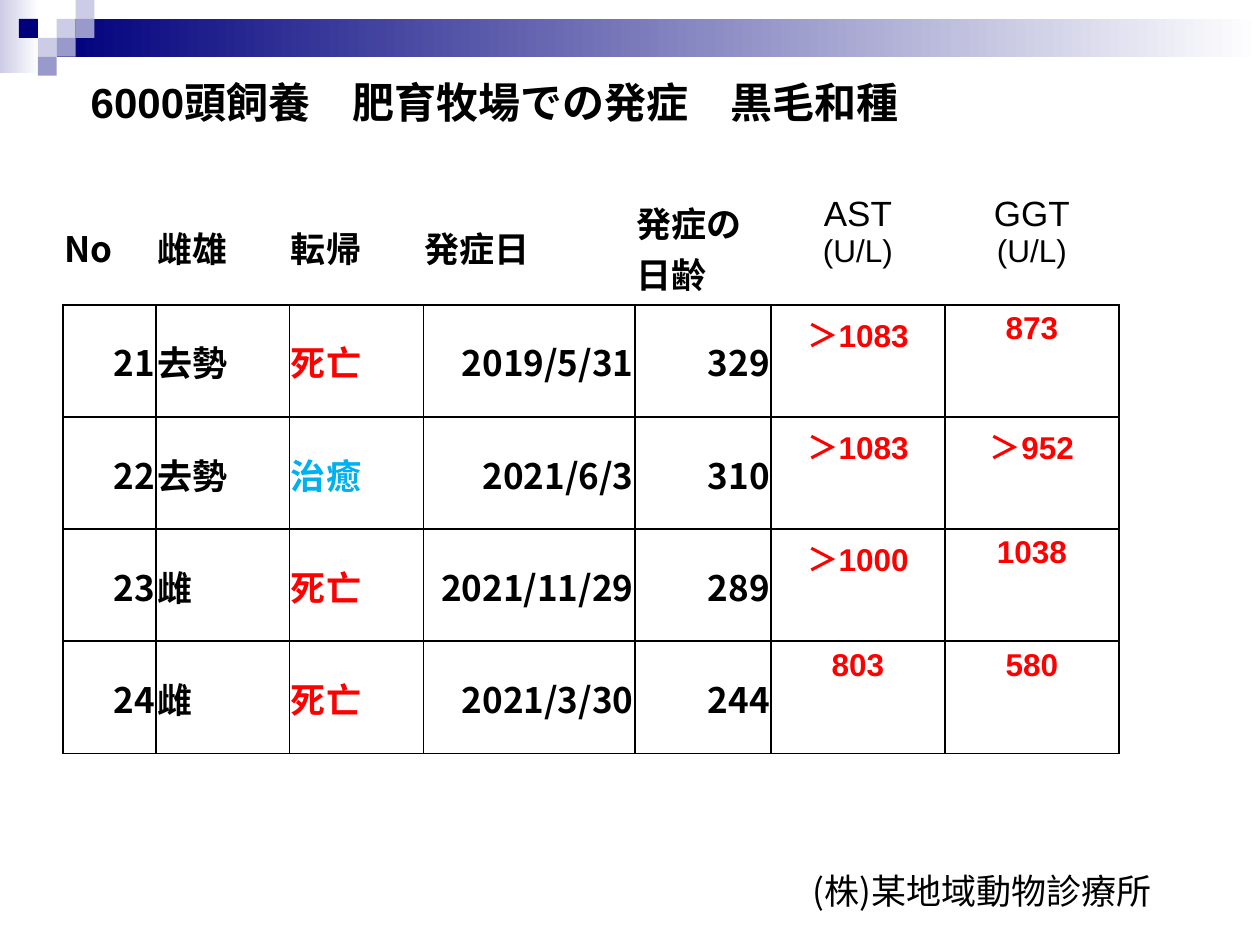
from lxml.etree import SubElement
from pptx import Presentation
from pptx.dml.color import RGBColor
from pptx.enum.shapes import MSO_SHAPE as SHAPE
from pptx.enum.text import MSO_ANCHOR as ANCHOR, MSO_AUTO_SIZE as AUTO, PP_ALIGN as ALIGN
from pptx.oxml import parse_xml
from pptx.oxml.ns import nsdecls, qn
from pptx.util import Inches, Pt

BLACK = RGBColor(0x00, 0x00, 0x00)
WHITE = RGBColor(0xFF, 0xFF, 0xFF)
RED = RGBColor(0xFF, 0x00, 0x00)
BLUE = RGBColor(0x00, 0xB0, 0xF0)
NAVY = RGBColor(0x00, 0x00, 0x7D)
PALE = RGBColor(0xCC, 0xCC, 0xE6)
LILAC = RGBColor(0x99, 0x99, 0xCC)

ARIAL = "Arial"
NOTO = "Noto Sans CJK JP"
UNIT = 0.15  # side of a corner square, inches

SQUARES = [  # column, row, colour
    (3, 1, PALE), (4, 0, PALE), (4, 1, LILAC), (2, 2, PALE),
    (1, 1, NAVY), (3, 2, LILAC), (2, 3, LILAC),
]
COL_WIDTHS = [0.74, 1.06, 1.06, 1.68, 1.08, 1.38, 1.38]
ROW_HEIGHTS = [0.92, 0.89, 0.89, 0.89, 0.89]
HEADER = ["No", "雌雄", "転帰", "発症日", "発症の日齢", "AST\n(U/L)", "GGT\n(U/L)"]
CASES = [
    ["21", "去勢", "死亡", "2019/5/31", "329", "＞1083", "873"],
    ["22", "去勢", "治癒", "2021/6/3", "310", "＞1083", "＞952"],
    ["23", "雌", "死亡", "2021/11/29", "289", "＞1000", "1038"],
    ["24", "雌", "死亡", "2021/3/30", "244", "803", "580"],
]
RIGHT_COLS = (0, 3, 4)
FIRST_LAB_COL = 5
OUTCOME_COL = 2
OUTCOME_COLORS = {"死亡": RED, "治癒": BLUE}


def write(tf, text, sizes=(20,), font=NOTO, color=BLACK, bold=False,
          align=ALIGN.LEFT, spacing=None):
    """Write one paragraph per line; the last size serves any further lines."""
    for i, line in enumerate(text.split("\n")):
        p = tf.paragraphs[0] if i == 0 else tf.add_paragraph()
        p.alignment = align
        if spacing:
            p.line_spacing = spacing
        r = p.add_run()
        r.text = line
        r.font.size = Pt(sizes[min(i, len(sizes) - 1)])
        r.font.name = font
        r.font.bold = bold
        r.font.color.rgb = color
        SubElement(r.font._element, qn("a:ea"), typeface=NOTO)


def set_borders(cell, sides):
    """Draw the named sides in black and clear the others."""
    for i, side in enumerate("LRTB"):
        paint = (f'<a:solidFill><a:srgbClr val="{BLACK}"/></a:solidFill>'
                 if side in sides else "<a:noFill/>")
        ln = parse_xml(f'<a:ln{side} {nsdecls("a")} w="{Pt(1)}">{paint}</a:ln{side}>')
        cell._tc.get_or_add_tcPr().insert(i, ln)


class SlideBuilder:
    def __init__(self, prs):
        self.s = prs.slides.add_slide(prs.slide_layouts[5])

    def title(self, text, box):
        sp = self.s.shapes.title
        sp.left, sp.top, sp.width, sp.height = map(Inches, box)
        tf = sp.text_frame
        tf.word_wrap = True
        tf.auto_size = AUTO.NONE
        tf.vertical_anchor = ANCHOR.MIDDLE
        write(tf, text, sizes=(24,), font=ARIAL, bold=True)

    def text(self, text, box, anchor=ANCHOR.TOP, **style):
        tf = self.s.shapes.add_textbox(*map(Inches, box)).text_frame
        tf.word_wrap = True
        tf.vertical_anchor = anchor
        write(tf, text, **style)

    def rect(self, box, color, fade_to=None):
        sp = self.s.shapes.add_shape(SHAPE.RECTANGLE, *map(Inches, box))
        sp.shadow.inherit = False
        sp.line.fill.background()
        if fade_to is None:
            sp.fill.solid()
            sp.fill.fore_color.rgb = color
            return
        sp.fill.gradient()
        sp.fill.gradient_angle = 0
        for stop, position, rgb in zip(sp.fill.gradient_stops, (0, 1), (color, fade_to)):
            stop.position = position
            stop.color.rgb = rgb

    def table(self, rows, left, top):
        size = sum(COL_WIDTHS), sum(ROW_HEIGHTS)
        frame = self.s.shapes.add_table(len(rows), len(COL_WIDTHS),
                                        *map(Inches, (left, top, *size)))
        tbl = frame.table
        tbl.first_row = tbl.horz_banding = False
        for col, width in zip(tbl.columns, COL_WIDTHS):
            col.width = Inches(width)
        for row, height in zip(tbl.rows, ROW_HEIGHTS):
            row.height = Inches(height)
        for i, row in enumerate(rows):
            for j, text in enumerate(row):
                self.cell(tbl.cell(i, j), text, j, is_header=i == 0)

    def cell(self, cell, text, col, is_header):
        cell.fill.background()
        set_borders(cell, "B" if is_header else "LRTB")
        if col >= FIRST_LAB_COL:
            style = (dict(sizes=(20, 18)) if is_header
                     else dict(sizes=(18,), color=RED, bold=True))
            write(cell.text_frame, text, font=ARIAL, align=ALIGN.CENTER, **style)
            return
        cell.vertical_anchor = ANCHOR.MIDDLE
        cell.margin_left = cell.margin_right = cell.margin_top = Inches(0.01)
        cell.margin_bottom = 0
        to_right = col in RIGHT_COLS and not is_header
        color = OUTCOME_COLORS.get(text, BLACK) if col == OUTCOME_COL else BLACK
        write(cell.text_frame, text, bold=True, color=color,
              align=ALIGN.RIGHT if to_right else ALIGN.LEFT)


def main():
    prs = Presentation()
    prs.slide_width, prs.slide_height = Inches(10), Inches(7.5)
    b = SlideBuilder(prs)

    # Header band and corner squares
    b.rect((0, 0, 0.31, 0.58), PALE, fade_to=WHITE)
    b.rect((0.45, UNIT, 9.55, 2 * UNIT), NAVY, fade_to=WHITE)
    for col, row, color in SQUARES:
        b.rect((col * UNIT, row * UNIT, UNIT, UNIT), color)

    # Clinic name, title and case table
    b.text("(株)某地域動物診療所", (6.32, 6.78, 2.92, 0.5), anchor=ANCHOR.BOTTOM,
           align=ALIGN.RIGHT, spacing=0.83)
    b.title("6000頭飼養　肥育牧場での発症　黒毛和種", (0.62, 0.56, 8.38, 0.5))
    b.table([HEADER, *CASES], 0.5, 1.5)

    prs.save("out.pptx")


if __name__ == "__main__":
    main()
